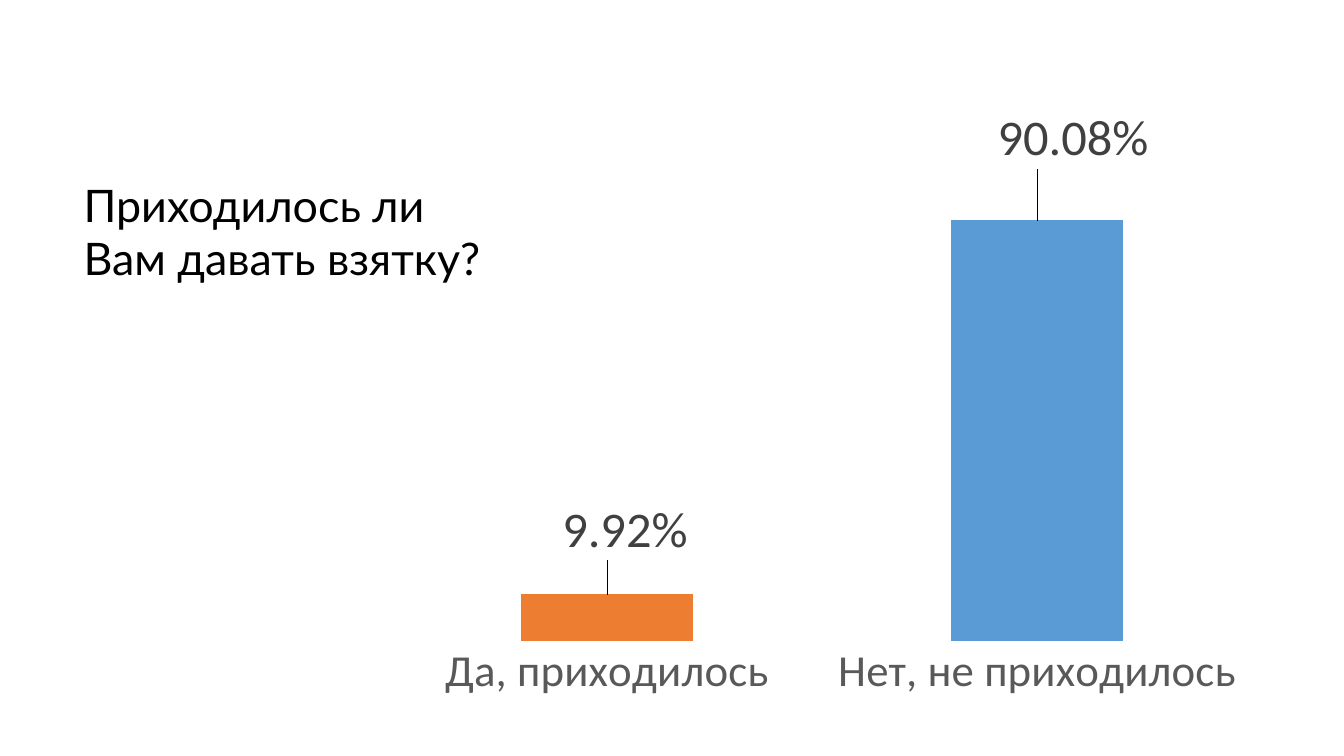
"""Build a slide with a survey question and a two-column chart of the answers."""
import lxml.etree
import pptx
import pptx.chart.data
import pptx.dml.color
import pptx.enum.chart
import pptx.enum.text
import pptx.oxml.ns
import pptx.util

Inches = pptx.util.Inches
qn = pptx.oxml.ns.qn


def color(hex_string):
    return pptx.dml.color.RGBColor.from_string(hex_string)


def add_layout(parent, position, values):
    for old_layout in parent.findall(qn("c:layout")):
        parent.remove(old_layout)
    layout = lxml.etree.Element(qn("c:layout"))
    manual = lxml.etree.SubElement(layout, qn("c:manualLayout"))
    for name, value in values.items():
        lxml.etree.SubElement(manual, qn(f"c:{name}")).set("val", str(value))
    parent.insert(position, layout)


deck = pptx.Presentation()
deck.slide_width, deck.slide_height = Inches(13.33), Inches(7.5)
page = deck.slides.add_slide(deck.slide_layouts[6])

box = page.shapes.add_textbox(Inches(0.73), Inches(1.71), Inches(4.29), Inches(1.18))
frame = box.text_frame
frame.word_wrap = False
frame.auto_size = pptx.enum.text.MSO_AUTO_SIZE.SHAPE_TO_FIT_TEXT
for index, line in enumerate(["Приходилось ли", "Вам давать взятку?"]):
    para = frame.add_paragraph() if index else frame.paragraphs[0]
    span = para.add_run()
    span.text = line
    for name, value in {"name": "Lato", "size": pptx.util.Pt(32)}.items():
        setattr(span.font, name, value)
    span.font.color.rgb = color("000000")

answers = pptx.chart.data.CategoryChartData(number_format="0.00%")
answers.categories = ["Да, приходилось", "Нет, не приходилось"]
answers.add_series("Series 1", [0.0992, 0.9008])
chart = page.shapes.add_chart(
    pptx.enum.chart.XL_CHART_TYPE.COLUMN_CLUSTERED,
    Inches(3.71), Inches(1.07), Inches(8.89), Inches(5.93), answers,
).chart
chart.has_title = False
chart.has_legend = False
chart.font.name = "Calibri"
chart.font.size = pptx.util.Pt(32)

value_format = {
    "minimum_scale": 0,
    "maximum_scale": 1,
    "has_major_gridlines": False,
    "visible": False,
}
for name, value in value_format.items():
    setattr(chart.value_axis, name, value)

category_axis = chart.category_axis
category_axis.major_tick_mark = pptx.enum.chart.XL_TICK_MARK.NONE
category_axis.format.line.fill.background()
category_font = category_axis.tick_labels.font
category_font.name = "Calibri"
category_font.size = pptx.util.Pt(32)
category_font.color.rgb = color("595959")

plot = chart.plots[0]
plot.gap_width = 150
plot.vary_by_categories = False
plot_area = chart.element.find(".//" + qn("c:plotArea"))
add_layout(plot_area, 0, {
    "layoutTarget": "inner", "xMode": "edge", "yMode": "edge",
    "x": 0.02, "y": 0.1, "w": 0.96, "h": 0.79,
})

series = plot.series[0]
series.format.fill.solid()
series.format.fill.fore_color.rgb = color("5B9BD5")
label_offsets = [("ED7D31", 0.02, -0.05), ("5B9BD5", 0.04, -0.08)]
for index, (fill_color, right, down) in enumerate(label_offsets):
    point = series.points[index]
    point.format.fill.solid()
    point.format.fill.fore_color.rgb = color(fill_color)
    label = point.data_label
    label.position = pptx.enum.chart.XL_LABEL_POSITION.OUTSIDE_END
    for name, value in {"name": "Calibri", "size": pptx.util.Pt(36)}.items():
        setattr(label.font, name, value)
    label.font.color.rgb = color("404040")
    label_element = series.data_labels._element.findall(qn("c:dLbl"))[index]
    add_layout(label_element, 1, {"x": right, "y": down})
    number_format = lxml.etree.Element(qn("c:numFmt"), formatCode="0.00%", sourceLinked="0")
    label_element.insert(2, number_format)

deck.save("out.pptx")
